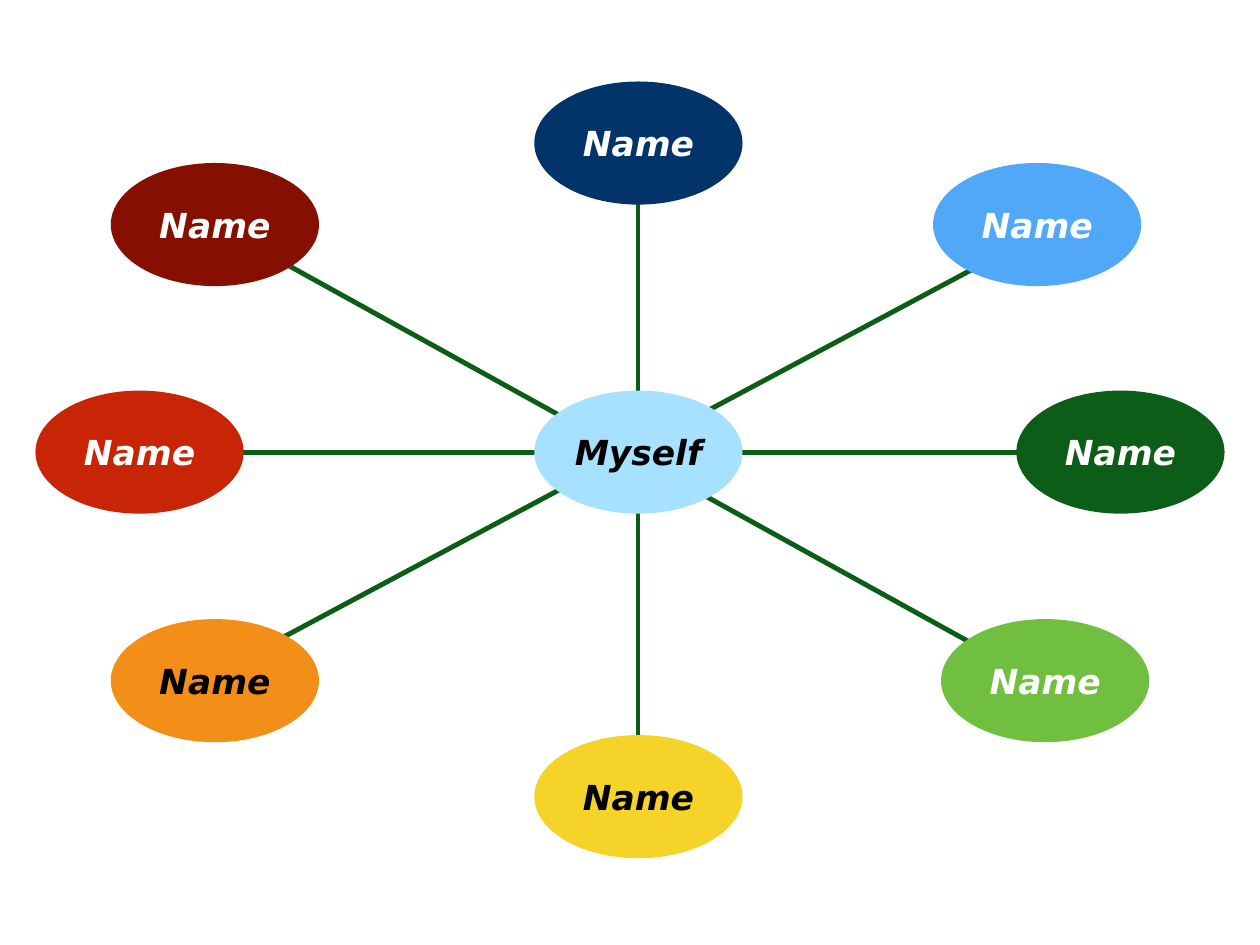
import pptx
import pptx.util
import pptx.dml.color
import pptx.enum.shapes
import pptx.enum.text
import lxml.etree
from pptx.oxml.ns import qn

Inches = pptx.util.Inches
Pt = pptx.util.Pt
RGB = pptx.dml.color.RGBColor.from_string

theme = {
    "font": "DejaVu Sans", "size": 28, "stroke": 4,
    "light": "FFFFFF", "dark": "000000",
    "sky": "A6E1FF", "navy": "02346A", "maroon": "851001", "blue": "51A8F9",
    "green": "0B5D18", "lime": "70BF41", "yellow": "F5D328",
    "orange": "F38F18", "red": "C82506",
}

deck = pptx.Presentation()
deck.slide_width = Inches(14.22)
deck.slide_height = Inches(10.67)
slide = deck.slides.add_slide(deck.slide_layouts[6])
slide.background.fill.solid()
slide.background.fill.fore_color.rgb = RGB(theme["light"])

# Spokes: each line joins two opposite names through the centre
spokes = [
    (2.41, 2.53, 11.72, 7.68),
    (1.73, 5.11, 12.68, 5.11),
    (7.2, 9.15, 7.2, 1.98),
    (2.55, 7.54, 11.67, 2.67),
]
for ends in spokes:
    spoke = slide.shapes.add_connector(
        pptx.enum.shapes.MSO_CONNECTOR.STRAIGHT, *map(Inches, ends))
    spoke.line.color.rgb = RGB(theme["green"])
    spoke.line.width = Pt(theme["stroke"])
    lxml.etree.SubElement(spoke._element.spPr, qn("a:effectLst"))

# Bubbles: left, top, label, fill, text colour
wide, high, inset = 2.35, 1.39, 0.06
left, mid = 1.25, 6.03
upper, centre, lower = 1.84, 4.41, 6.99
bubbles = [
    (mid, centre, "Myself", "sky", "dark"),
    (mid, 0.92, "Name", "navy", "light"),
    (left, upper, "Name", "maroon", "light"),
    (10.53, upper, "Name", "blue", "light"),
    (11.47, centre, "Name", "green", "light"),
    (10.62, lower, "Name", "lime", "light"),
    (mid, 8.3, "Name", "yellow", "dark"),
    (left, lower, "Name", "orange", "dark"),
    (0.4, centre, "Name", "red", "light"),
]
for x, y, label, fill, ink in bubbles:
    bubble = slide.shapes.add_shape(
        pptx.enum.shapes.MSO_SHAPE.OVAL,
        Inches(x), Inches(y), Inches(wide), Inches(high))
    bubble.shadow.inherit = False
    bubble.fill.solid()
    bubble.fill.fore_color.rgb = RGB(theme[fill])
    bubble.line.fill.background()

    # Label
    frame = bubble.text_frame
    frame.text = label
    frame.word_wrap = False
    frame.vertical_anchor = pptx.enum.text.MSO_ANCHOR.MIDDLE
    frame.margin_left = frame.margin_right = Inches(inset)
    frame.margin_top = frame.margin_bottom = Inches(inset)
    line = frame.paragraphs[0]
    line.alignment = pptx.enum.text.PP_ALIGN.CENTER
    font = line.runs[0].font
    font.name = theme["font"]
    font.size = Pt(theme["size"])
    font.bold = font.italic = True
    font.color.rgb = RGB(theme[ink])

deck.save("out.pptx")
